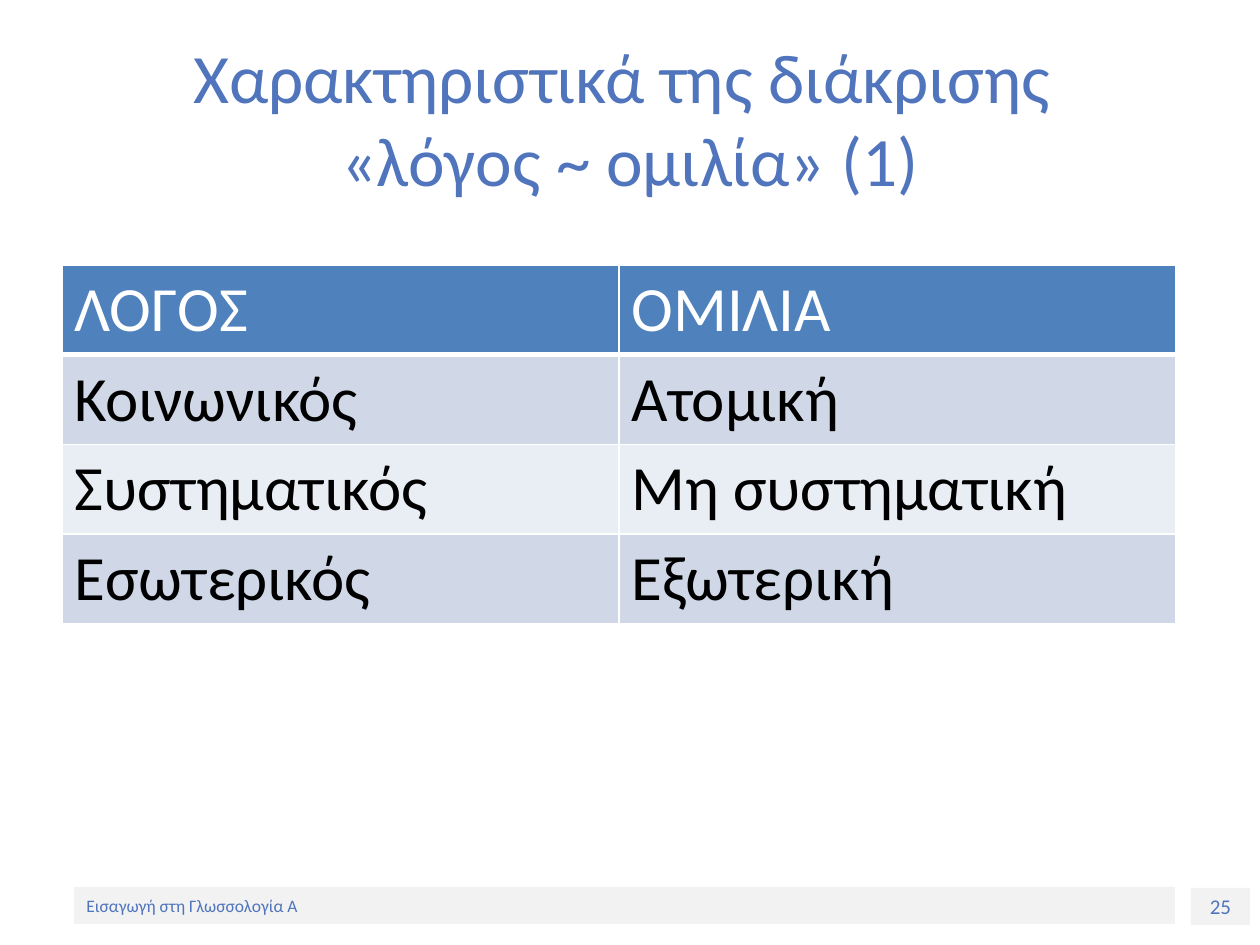
from dataclasses import dataclass

from lxml.etree import SubElement
from pptx import Presentation
from pptx.dml.color import RGBColor
from pptx.enum.shapes import MSO_SHAPE as SHAPE
from pptx.enum.text import MSO_ANCHOR as ANCHOR, MSO_AUTO_SIZE as AUTO_SIZE, PP_ALIGN as ALIGN
from pptx.oxml.ns import qn
from pptx.util import Emu, Pt

EMU_PER_PX = 914400 / 126
FONT = "Calibri"
COLORS = {
    "accent": "5075BC",
    "bar": "F2F2F2",
    "header": "4F81BD",
    "band_dark": "D0D8E8",
    "band_light": "E9EDF4",
    "white": "FFFFFF",
    "black": "000000",
}
ROWS = [
    ("ΛΟΓΟΣ", "ΟΜΙΛΙΑ"),
    ("Κοινωνικός", "Ατομική"),
    ("Συστηματικός", "Μη συστηματική"),
    ("Εσωτερικός", "Εξωτερική"),
]
ROW_HEIGHT = 89


@dataclass
class Box:
    left: int
    top: int
    width: int
    height: int

    def emu(self) -> list[Emu]:
        return [px(n) for n in (self.left, self.top, self.width, self.height)]


@dataclass
class FooterBar:
    box: Box
    text: str
    size: int
    align: ALIGN


FOOTER_BARS = [
    FooterBar(Box(1191, 888, 59, 37), "25", 12, ALIGN.CENTER),
    FooterBar(Box(74, 887, 1101, 37), "Εισαγωγή στη Γλωσσολογία Α", 10, ALIGN.LEFT),
]


def px(n: int) -> Emu:
    return Emu(round(n * EMU_PER_PX))


def rgb(name: str) -> RGBColor:
    return RGBColor.from_string(COLORS[name])


def write(tf, text: str, size: float, color: str, align: ALIGN = ALIGN.LEFT) -> None:
    tf.text = text
    p = tf.paragraphs[0]
    p.alignment = align
    for r in p.runs:
        for name, value in {"name": FONT, "size": Pt(size), "bold": False}.items():
            setattr(r.font, name, value)
        r.font.color.rgb = rgb(color)


def add_title(slide, text: str, box: Box) -> None:
    sp = slide.shapes.title
    sp.left, sp.top, sp.width, sp.height = box.emu()
    write(sp.text_frame, text, 39.6, "accent", ALIGN.CENTER)
    layout = {"vertical_anchor": ANCHOR.MIDDLE, "word_wrap": True, "auto_size": AUTO_SIZE.NONE}
    for name, value in layout.items():
        setattr(sp.text_frame, name, value)


def add_footer_bar(slide, bar: FooterBar) -> None:
    sp = slide.shapes.add_shape(SHAPE.RECTANGLE, *bar.box.emu())
    sp.shadow.inherit = False
    sp.fill.solid()
    sp.fill.fore_color.rgb = rgb("bar")
    sp.line.fill.background()
    sp.text_frame.word_wrap = True
    sp.text_frame.vertical_anchor = ANCHOR.MIDDLE
    write(sp.text_frame, bar.text, bar.size, "accent", bar.align)


def set_borders(cell, widths: dict[str, int]) -> None:
    """Draw white cell borders; widths are points by side, in the order L, R, T, B."""
    tc_pr = cell._tc.get_or_add_tcPr()
    for side, width in widths.items():
        ln = SubElement(tc_pr, qn(f"a:ln{side}"), w=str(Pt(width)))
        fill = SubElement(ln, qn("a:solidFill"))
        SubElement(fill, qn("a:srgbClr"), val=COLORS["white"])


def add_comparison(slide, box: Box) -> None:
    table = slide.shapes.add_table(len(ROWS), len(ROWS[0]), *box.emu()).table
    for i, texts in enumerate(ROWS):
        table.rows[i].height = px(ROW_HEIGHT)
        fill = "header" if i == 0 else "band_dark" if i % 2 else "band_light"
        widths = {"L": 1, "R": 1, "T": 3 if i == 1 else 1, "B": 3 if i == 0 else 1}
        for j, text in enumerate(texts):
            cell = table.cell(i, j)
            set_borders(cell, widths)
            cell.fill.solid()
            cell.fill.fore_color.rgb = rgb(fill)
            write(cell.text_frame, text, 36, "black" if i else "white")


def main() -> None:
    prs = Presentation()
    prs.slide_width, prs.slide_height = px(1260), px(945)
    slide = prs.slides.add_slide(prs.slide_layouts[5])
    for bar in FOOTER_BARS:
        add_footer_bar(slide, bar)
    add_comparison(slide, Box(62, 265, 1114, ROW_HEIGHT * len(ROWS)))
    add_title(slide, "Χαρακτηριστικά της διάκρισης \v«λόγος ~ ομιλία» (1)", Box(63, 38, 1134, 158))
    prs.save("out.pptx")


if __name__ == "__main__":
    main()
